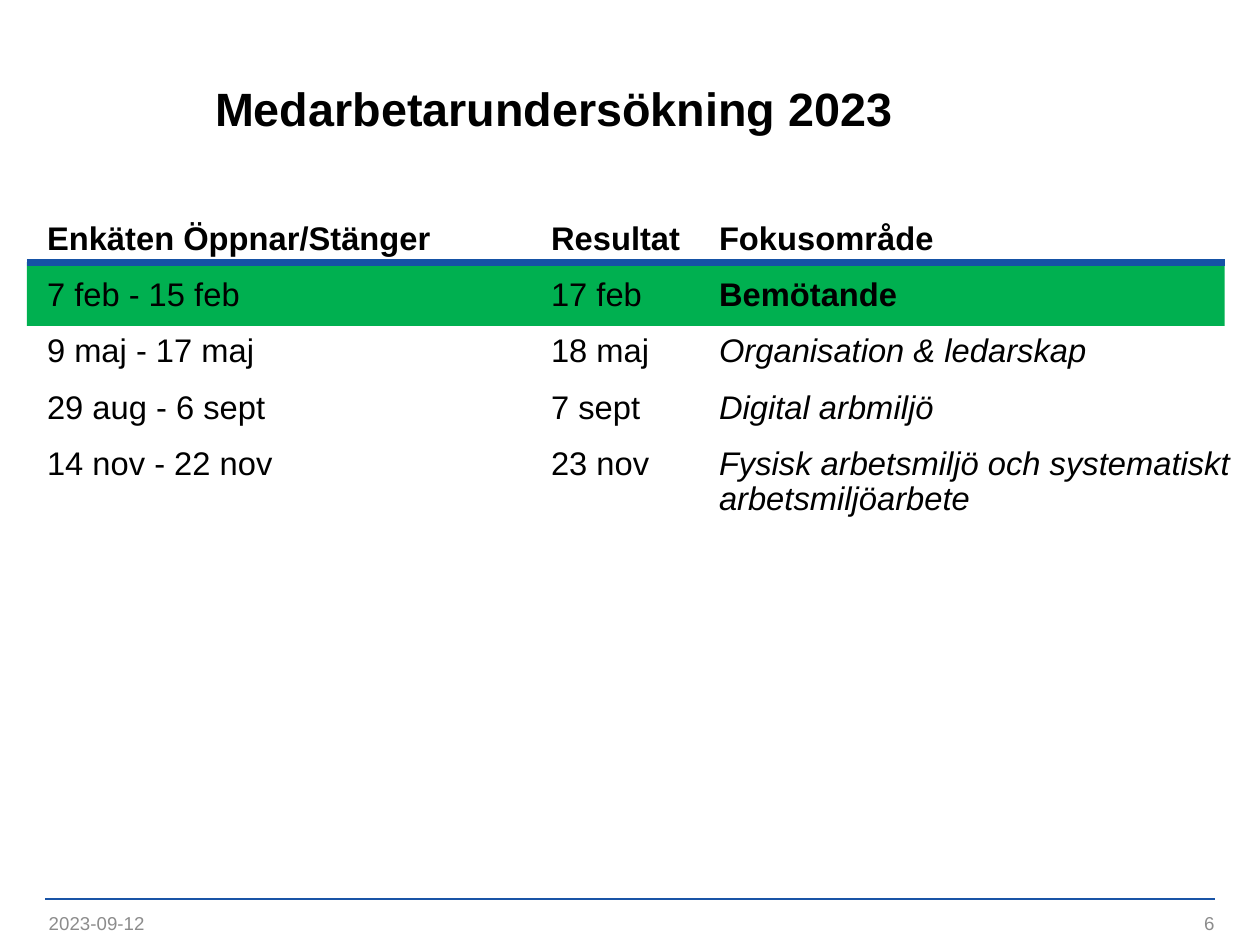
from dataclasses import dataclass

from lxml import etree
from pptx import Presentation
from pptx import util as u
from pptx.dml.color import RGBColor
from pptx.enum import shapes, text
from pptx.oxml.ns import qn

COLORS = {"text": "000000", "footer": "8C8C8C", "highlight": "00B050",
          "header_rule": "1552A6", "footer_rule": "1954A6"}
FONT = "Arial"
WIDTH = 7.5
HEIGHT = WIDTH * 3 / 4
TAB_STEP = u.Inches(1)
FOCUS_TABS = 4  # tab steps from the left edge of the body to the focus column
BAR_LEFT, BAR_TOP, BAR_WIDTH, BAR_HEIGHT = 0.16, 1.56, 7.13, 0.38


@dataclass
class Survey:
    period: str
    result: str
    focus: list[str]
    period_tabs: int = 2
    bold: bool = False
    bold_focus: bool = False
    italic_focus: bool = True


@dataclass
class Rule:
    left: float
    right: float
    top: float
    color: str
    weight: float


@dataclass
class Footer:
    wording: str
    left: float
    alignment: text.PP_ALIGN


SURVEYS = [
    Survey("Enkäten Öppnar/Stänger ", "Resultat ", ["Fokusområde"],
           period_tabs=1, bold=True, bold_focus=True, italic_focus=False),
    Survey("7 feb - 15 feb", "17 feb", ["Bemötande"],
           bold_focus=True, italic_focus=False),
    Survey("9 maj - 17 maj", "18 maj", ["Organisation & ledarskap"]),
    Survey("29 aug - 6 sept", "7 sept ", ["Digital arbmiljö"]),
    Survey("14 nov - 22 nov", "23 nov",
           ["Fysisk arbetsmiljö och systematiskt ", "arbetsmiljöarbete"]),
]
RULES = [
    Rule(0.27, 7.23, 5.35, "footer_rule", 1),
    Rule(BAR_LEFT, BAR_LEFT + BAR_WIDTH, BAR_TOP, "header_rule", 3),
]
FOOTERS = [
    Footer("2023-09-12", 0.29, text.PP_ALIGN.LEFT),
    Footer("6", 5.54, text.PP_ALIGN.RIGHT),
]


def rgb(name: str) -> RGBColor:
    return RGBColor.from_string(COLORS[name])


def format_font(font, size: float, color: str, bold=False, italic=False) -> None:
    font.name, font.size = FONT, u.Pt(size)
    font.bold, font.italic = bold, italic
    font.color.rgb = rgb(color)


def place(shape, left: float, top: float, width: float, height: float) -> None:
    shape.left, shape.top = u.Inches(left), u.Inches(top)
    shape.width, shape.height = u.Inches(width), u.Inches(height)


def prepare_frame(frame, anchor: text.MSO_ANCHOR) -> None:
    frame.margin_left = frame.margin_right = frame.margin_top = frame.margin_bottom = 0
    frame.word_wrap = True
    frame.auto_size = text.MSO_AUTO_SIZE.NONE
    frame.vertical_anchor = anchor


def set_master_tabs(presentation) -> None:
    for level in presentation.slide_master.element.iter(qn("a:lvl1pPr")):
        level.set("defTabSz", str(int(TAB_STEP)))


def remove_bullet(paragraph) -> None:
    """Drop the bullet and its indent, and set the tab step."""
    properties = paragraph._p.get_or_add_pPr()
    properties.set("marL", "0")
    properties.set("indent", "0")
    properties.set("defTabSz", str(int(TAB_STEP)))
    etree.SubElement(properties, qn("a:buNone"))


def fill_title(title) -> None:
    place(title, 1.28, 0.28, 5.94, 0.74)
    title.text_frame.text = "Medarbetarundersökning 2023"
    prepare_frame(title.text_frame, text.MSO_ANCHOR.MIDDLE)
    paragraph = title.text_frame.paragraphs[0]
    paragraph.alignment = text.PP_ALIGN.LEFT
    paragraph.line_spacing = u.Pt(22.5)
    format_font(paragraph.runs[0].font, 20, "text", bold=True)


def fill_schedule(body) -> None:
    place(body, 0.28, 1.32, 7.21, 3.89)
    frame = body.text_frame
    prepare_frame(frame, text.MSO_ANCHOR.TOP)
    for index, survey in enumerate(SURVEYS):
        paragraph = frame.add_paragraph() if index else frame.paragraphs[0]
        remove_bullet(paragraph)
        paragraph.alignment = text.PP_ALIGN.LEFT
        paragraph.line_spacing = 0.9
        paragraph.space_before = u.Pt(7.5 if index else 0)
        paragraph.space_after = u.Pt(1.5)
        dates = paragraph.add_run()
        dates.text = survey.period + "\t" * survey.period_tabs + survey.result + "\t"
        format_font(dates.font, 14, "text", survey.bold)
        for number, line in enumerate(survey.focus):
            if number:
                paragraph.add_line_break()
            focus = paragraph.add_run()
            focus.text = "\t" * FOCUS_TABS + line if number else line
            format_font(focus.font, 14, "text", survey.bold_focus, survey.italic_focus)


def add_highlight(slide) -> None:
    """Put the bar of the current survey behind the text."""
    bar = slide.shapes.add_shape(shapes.MSO_SHAPE.RECTANGLE, 0, 0, 0, 0)
    place(bar, BAR_LEFT, BAR_TOP, BAR_WIDTH, BAR_HEIGHT)
    bar.shadow.inherit = False
    bar.fill.solid()
    bar.fill.fore_color.rgb = rgb("highlight")
    bar.line.fill.background()
    slide.shapes._spTree.insert(2, bar._element)


def add_rule(slide, rule: Rule) -> None:
    line = slide.shapes.add_connector(
        shapes.MSO_CONNECTOR.STRAIGHT, u.Inches(rule.left), u.Inches(rule.top),
        u.Inches(rule.right), u.Inches(rule.top))
    line.line.color.rgb = rgb(rule.color)
    line.line.width = u.Pt(rule.weight)
    etree.SubElement(line._element.spPr, qn("a:effectLst"))


def add_footer(slide, footer: Footer) -> None:
    box = slide.shapes.add_textbox(0, 0, 0, 0)
    place(box, footer.left, 5.37, 1.69, 0.25)
    box.text_frame.text = footer.wording
    prepare_frame(box.text_frame, text.MSO_ANCHOR.MIDDLE)
    paragraph = box.text_frame.paragraphs[0]
    paragraph.alignment = footer.alignment
    format_font(paragraph.runs[0].font, 8, "footer")


def main() -> None:
    presentation = Presentation()
    presentation.slide_width = u.Inches(WIDTH)
    presentation.slide_height = u.Inches(HEIGHT)
    set_master_tabs(presentation)
    slide = presentation.slides.add_slide(presentation.slide_layouts[1])
    fill_title(slide.shapes.title)
    fill_schedule(slide.placeholders[1])
    add_highlight(slide)
    for rule in RULES:
        add_rule(slide, rule)
    for footer in FOOTERS:
        add_footer(slide, footer)
    presentation.save("out.pptx")


if __name__ == "__main__":
    main()
